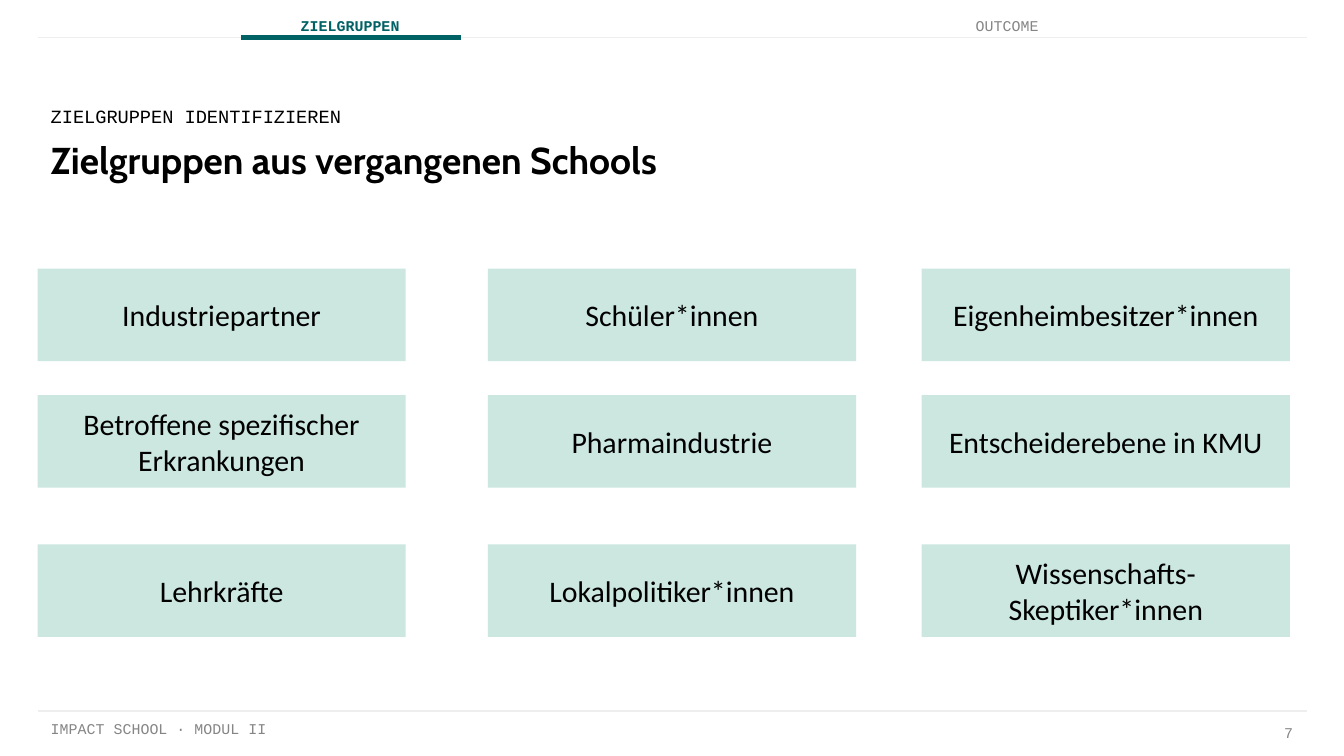
"""Build the slide of target groups from past schools."""
from lxml.etree import SubElement
from pptx import Presentation
from pptx.dml.color import RGBColor
from pptx.enum.shapes import MSO_CONNECTOR, MSO_SHAPE
from pptx.enum.text import MSO_ANCHOR, PP_ALIGN
from pptx.oxml.ns import qn
from pptx.util import Cm, Pt

COLORS = {"ink": "000000", "muted": "858585", "accent": "006265",
          "rule": "EEEEEE", "card": "CBE7E0"}
MONO = "Courier New"
LEFT, RIGHT = 0.71, 24.71
HEADER_Y, FOOTER_Y = 0.71, 13.44
INSET = 0.25

TARGET_GROUPS = [
    ["Industriepartner", "Schüler*innen", "Eigenheimbesitzer*innen"],
    ["Betroffene spezifischer Erkrankungen", "Pharmaindustrie", "Entscheiderebene in KMU"],
    ["Lehrkräfte", "Lokalpolitiker*innen", "Wissenschafts-\vSkeptiker*innen"],
]
CARD_COLUMNS = [LEFT, 9.22, 17.42]
CARD_ROWS = [5.08, 7.47, 10.29]
CARD_SIZE = (6.96, 1.75)

RULES = [
    (LEFT, RIGHT, FOOTER_Y, "rule", 0.75),
    (LEFT, RIGHT, HEADER_Y, "rule", 0.75),
    (4.55, 8.71, HEADER_Y, "accent", 2.25),
]

LABELS = [
    {"text": "IMPACT SCHOOL · MODUL II", "box": (LEFT, FOOTER_Y, 16, 0.86),
     "color": "muted", "anchor": MSO_ANCHOR.TOP},
    {"text": "7", "box": (23.6, FOOTER_Y, 1.09, 0.86), "color": "muted",
     "align": PP_ALIGN.RIGHT, "spacing": 0.8},
    {"text": "ZIELGRUPPEN", "box": (5.16, 0.05, 2.92, 0.86), "color": "accent",
     "bold": True, "align": PP_ALIGN.CENTER, "side_inset": 0},
    {"text": "OUTCOME", "box": (16.81, 0.05, 4.45, 0.86), "color": "muted",
     "align": PP_ALIGN.CENTER},
    {"text": "Zielgruppen aus vergangenen Schools", "box": (LEFT, 2.34, 19.74, 1.32),
     "size": 20, "font": "Cabin", "bold": True, "anchor": MSO_ANCHOR.TOP},
    {"text": "ZIELGRUPPEN IDENTIFIZIEREN", "box": (LEFT, 1.93, 19.74, 0.51), "size": 10},
]


def rgb(name):
    return RGBColor.from_string(COLORS[name])


def write(shape, text, size=8, font=MONO, color="ink", bold=False,
          align=PP_ALIGN.LEFT, anchor=MSO_ANCHOR.MIDDLE, spacing=None, side_inset=INSET):
    frame = shape.text_frame
    frame.word_wrap = True
    frame.vertical_anchor = anchor
    frame.margin_left = frame.margin_right = Cm(side_inset)
    frame.margin_top = frame.margin_bottom = Cm(INSET)
    paragraph = frame.paragraphs[0]
    paragraph.text = text
    paragraph.alignment = align
    paragraph.line_spacing = spacing
    paragraph.font.size = Pt(size)
    paragraph.font.name = font
    paragraph.font.bold = bold
    paragraph.font.color.rgb = rgb(color)


def add_label(slide, box, **style):
    write(slide.shapes.add_textbox(*map(Cm, box)), **style)


def add_rule(slide, start, end, y, color, width):
    rule = slide.shapes.add_connector(MSO_CONNECTOR.STRAIGHT, Cm(start), Cm(y), Cm(end), Cm(y))
    rule.line.color.rgb = rgb(color)
    rule.line.width = Pt(width)
    SubElement(rule._element.spPr, qn("a:effectLst"))


def add_card(slide, left, top, group):
    card = slide.shapes.add_shape(MSO_SHAPE.RECTANGLE, *map(Cm, (left, top, *CARD_SIZE)))
    card.shadow.inherit = False
    card.fill.solid()
    card.fill.fore_color.rgb = rgb("card")
    card.line.fill.background()
    write(card, group, size=16, font="Calibri", align=PP_ALIGN.CENTER)


def main():
    deck = Presentation()
    deck.slide_width, deck.slide_height = Cm(25.4), Cm(14.29)
    slide = deck.slides.add_slide(deck.slide_layouts[6])
    for rule in RULES:
        add_rule(slide, *rule)
    for label in LABELS:
        add_label(slide, **label)
    for top, groups in zip(CARD_ROWS, TARGET_GROUPS):
        for left, group in zip(CARD_COLUMNS, groups):
            add_card(slide, left, top, group)
    deck.save("out.pptx")


if __name__ == "__main__":
    main()
